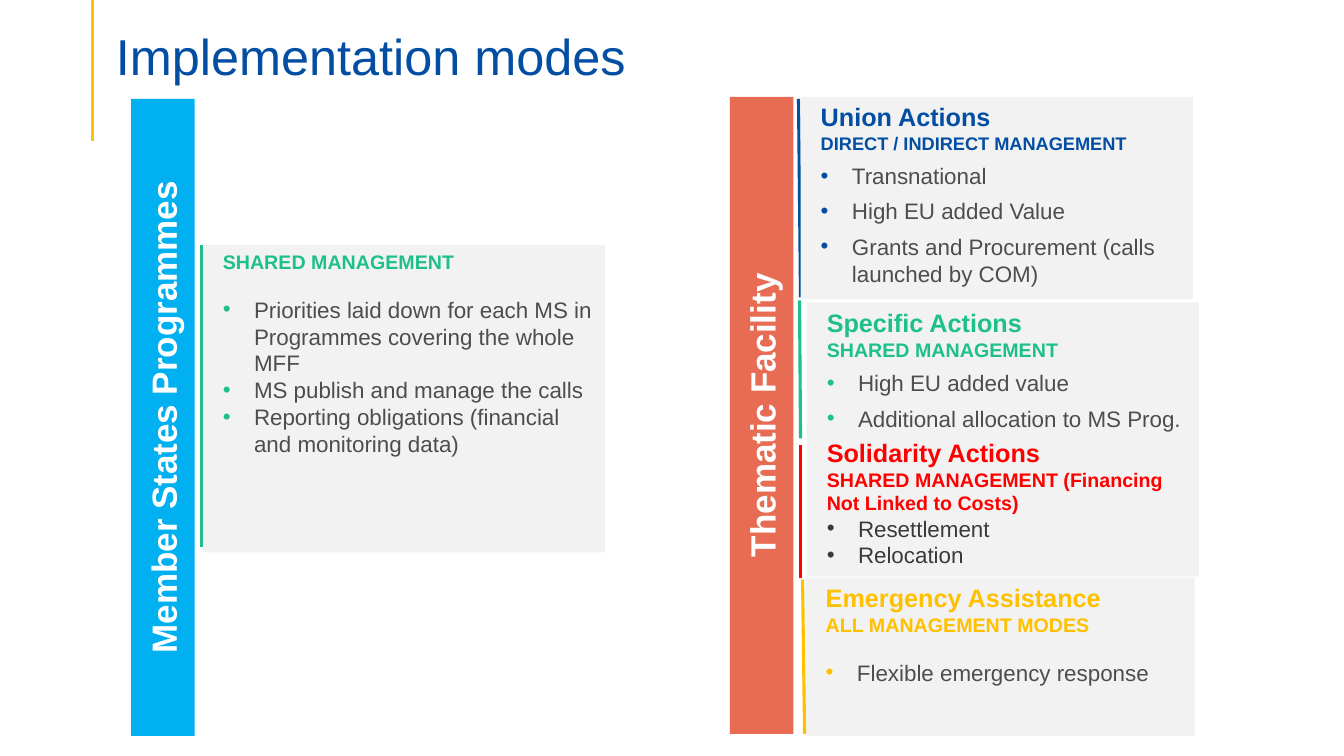
from dataclasses import dataclass

from lxml import etree
from pptx import Presentation
from pptx.dml.color import RGBColor
from pptx.enum.shapes import MSO_CONNECTOR, MSO_SHAPE
from pptx.enum.text import MSO_ANCHOR, MSO_AUTO_SIZE, PP_ALIGN
from pptx.oxml.ns import qn
from pptx.slide import Slide
from pptx.text.text import _Paragraph
from pptx.util import Inches, Pt

RECT = MSO_SHAPE.RECTANGLE
STRAIGHT = MSO_CONNECTOR.STRAIGHT
TOP, MIDDLE, BOTTOM = MSO_ANCHOR.TOP, MSO_ANCHOR.MIDDLE, MSO_ANCHOR.BOTTOM
LEFT, CENTER = PP_ALIGN.LEFT, PP_ALIGN.CENTER
NO_AUTOFIT = MSO_AUTO_SIZE.NONE


@dataclass(frozen=True)
class Theme:
    font: str = "Arial"
    blue: str = "034EA2"
    green: str = "1EC08A"
    red: str = "FF0000"
    yellow: str = "FFC000"
    cyan: str = "00B0F0"
    coral: str = "E76C53"
    panel: str = "F2F2F2"
    white: str = "FFFFFF"
    body: str = "4D4D4D"
    dark: str = "3A3A3A"
    title_size: int = 36
    bar_size: int = 25
    heading_size: int = 18
    mode_size: int = 14
    small_mode_size: int = 13
    item_size: int = 16
    rule_width: float = 2.25
    item_indent: float = 0.31


THEME = Theme()


@dataclass(frozen=True)
class Rule:
    x1: float
    y1: float
    x2: float
    y2: float
    color: str


@dataclass(frozen=True)
class Bar:
    text: str
    left: float
    top: float
    color: str


@dataclass(frozen=True)
class Panel:
    box: tuple[float, float, float, float]
    rule: Rule
    heading: str
    mode: str
    items: tuple[str, ...]
    mode_size: int = THEME.mode_size
    mode_gap: int = 0
    item_gap: int = 0
    item_color: str = THEME.body
    bullet_color: str = ""
    rule_behind: bool = False


TITLE_RULE = Rule(0.92, 0, 0.92, 1.4, THEME.yellow)

BARS = (
    Bar("Member States Programmes", 1.3, 0.98, THEME.cyan),
    Bar("Thematic Facility", 7.24, 0.96, THEME.coral),
)

PANELS = (
    Panel((2.01, 2.43, 3.99, 3.05), Rule(2, 2.43, 2, 5.43, THEME.green),
          "", "SHARED MANAGEMENT",
          ("Priorities laid down for each MS in Programmes covering the whole MFF",
           "MS publish and manage the calls",
           "Reporting obligations (financial and monitoring data)"),
          mode_gap=16),
    Panel((7.94, 0.96, 3.89, 2.01), Rule(7.92, 0.98, 7.94, 2.95, THEME.blue),
          "Union Actions", "DIRECT / INDIRECT MANAGEMENT",
          ("Transnational", "High EU added Value",
           "Grants and Procurement (calls launched by COM)"),
          mode_size=THEME.small_mode_size, mode_gap=6, item_gap=6, rule_behind=True),
    Panel((7.99, 5.73, 3.86, 1.57), Rule(7.96, 5.75, 7.98, 7.28, THEME.yellow),
          "Emergency Assistance", "ALL MANAGEMENT MODES",
          ("Flexible emergency response",), mode_gap=16),
    Panel((8, 3, 3.89, 1.43), Rule(7.93, 2.98, 7.94, 4.35, THEME.green),
          "Specific Actions", "SHARED MANAGEMENT",
          ("High EU added value", "Additional allocation to MS Prog."),
          mode_gap=6, item_gap=6),
    Panel((8, 4.29, 3.89, 1.43), Rule(7.94, 4.41, 7.94, 5.73, THEME.red),
          "Solidarity Actions", "SHARED MANAGEMENT (Financing Not Linked to Costs)",
          ("Resettlement", "Relocation"),
          item_color=THEME.dark, bullet_color=THEME.dark),
)


def style(p: _Paragraph, size: float, color: str, bold: bool = False) -> None:
    for r in p.runs:
        r.font.name = THEME.font
        r.font.size = Pt(size)
        r.font.bold = bold
        r.font.color.rgb = RGBColor.from_string(color)


def add_bullet(p: _Paragraph, color: str) -> None:
    pPr = p._p.get_or_add_pPr()
    indent = Inches(THEME.item_indent)
    pPr.set("marL", str(indent))
    pPr.set("indent", str(-indent))
    clr = etree.SubElement(pPr, qn("a:buClr"))
    etree.SubElement(clr, qn("a:srgbClr")).set("val", color)
    etree.SubElement(pPr, qn("a:buFont")).set("typeface", THEME.font)
    etree.SubElement(pPr, qn("a:buChar")).set("char", "•")


def add_rect(s: Slide, box: tuple[float, float, float, float], color: str):
    sp = s.shapes.add_shape(RECT, *(Inches(v) for v in box))
    sp.shadow.inherit = False
    sp.fill.solid()
    sp.fill.fore_color.rgb = RGBColor.from_string(color)
    sp.line.fill.background()
    sp.text_frame.word_wrap = True
    return sp


def add_rule(s: Slide, rule: Rule) -> None:
    ends = (rule.x1, rule.y1, rule.x2, rule.y2)
    line = s.shapes.add_connector(STRAIGHT, *(Inches(v) for v in ends))
    line.line.color.rgb = RGBColor.from_string(rule.color)
    line.line.width = Pt(THEME.rule_width)
    etree.SubElement(line.element.spPr, qn("a:effectLst"))


def add_bar(s: Slide, bar: Bar) -> None:
    sp = add_rect(s, (bar.left, bar.top, 0.63, 6.32), bar.color)
    sp.element.txBody.bodyPr.set("vert", "vert270")
    tf = sp.text_frame
    tf.vertical_anchor = MIDDLE
    p = tf.paragraphs[0]
    p.text = bar.text
    p.alignment = CENTER
    style(p, THEME.bar_size, THEME.white, bold=True)


def add_panel(s: Slide, panel: Panel) -> None:
    if panel.rule_behind:
        add_rule(s, panel.rule)
    tf = add_rect(s, panel.box, THEME.panel).text_frame
    if not panel.rule_behind:
        add_rule(s, panel.rule)
    tf.vertical_anchor = TOP
    tf.margin_left = Inches(0.2)

    accent = panel.rule.color
    heads = [text for text in (panel.heading, panel.mode) if text]
    tf.text = "\n".join((*heads, *panel.items))
    for i, p in enumerate(tf.paragraphs):
        p.alignment = LEFT
        if i >= len(heads):
            add_bullet(p, panel.bullet_color or accent)
            p.space_after = Pt(panel.item_gap)
            style(p, THEME.item_size, panel.item_color)
        elif i == len(heads) - 1:
            p.space_after = Pt(panel.mode_gap)
            style(p, panel.mode_size, accent, bold=True)
        else:
            style(p, THEME.heading_size, accent, bold=True)


def add_title(s: Slide, text: str) -> None:
    sp = s.shapes.title
    sp.left, sp.top, sp.width, sp.height = (Inches(v) for v in (1.05, 0, 11.5, 0.86))
    tf = sp.text_frame
    tf.text = text
    tf.auto_size = NO_AUTOFIT
    tf.vertical_anchor = BOTTOM
    tf.margin_bottom = 0
    p = tf.paragraphs[0]
    p.alignment = LEFT
    p.line_spacing = 0.9
    style(p, THEME.title_size, THEME.blue)


def main() -> None:
    prs = Presentation()
    prs.slide_width, prs.slide_height = Inches(13.33), Inches(7.5)
    s = prs.slides.add_slide(prs.slide_layouts.get_by_name("Title Only"))

    # Title
    add_rule(s, TITLE_RULE)
    add_title(s, "Implementation modes")

    # Programme bars and their panels
    for bar in BARS:
        add_bar(s, bar)
    for panel in PANELS:
        add_panel(s, panel)

    prs.save("out.pptx")


if __name__ == "__main__":
    main()
